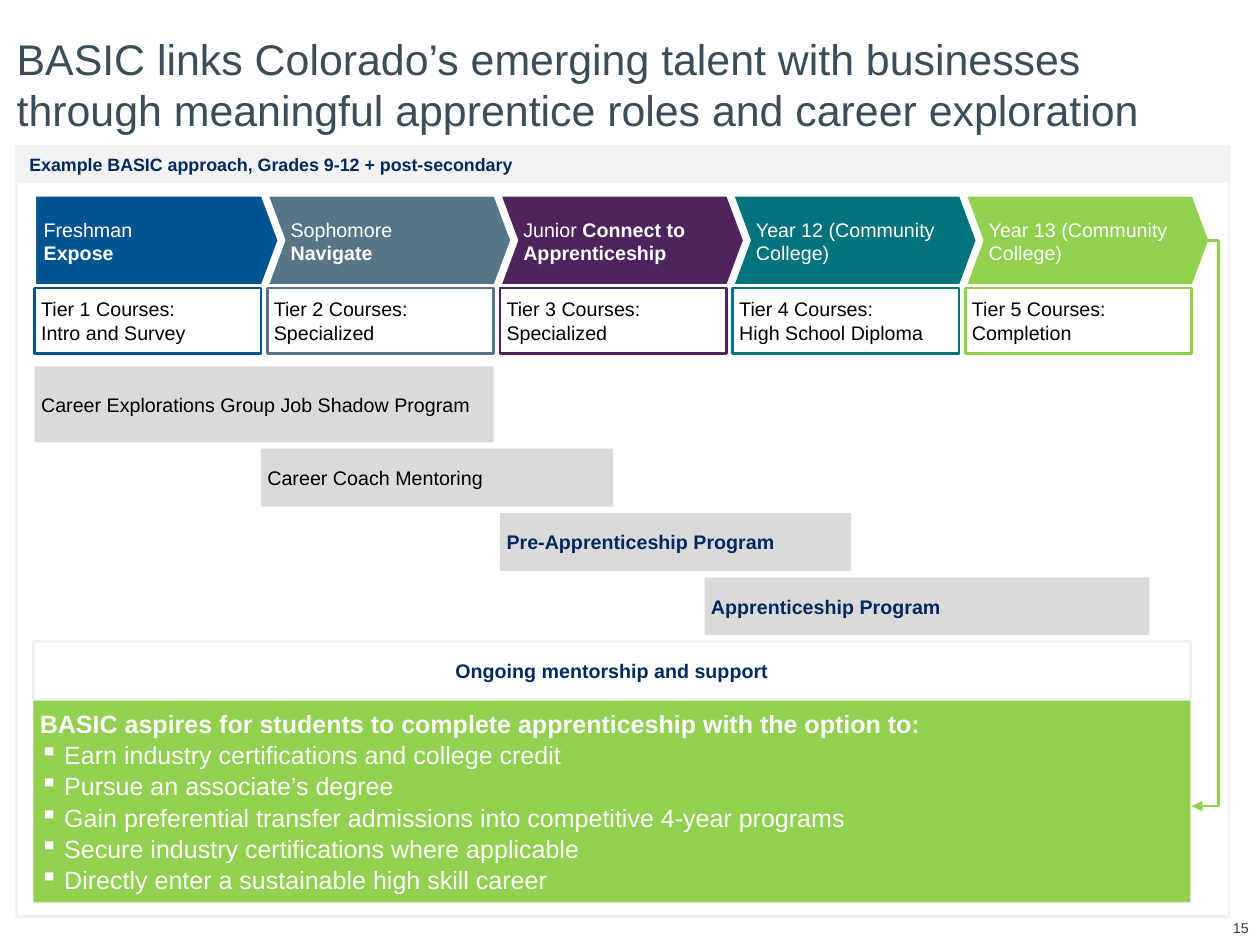
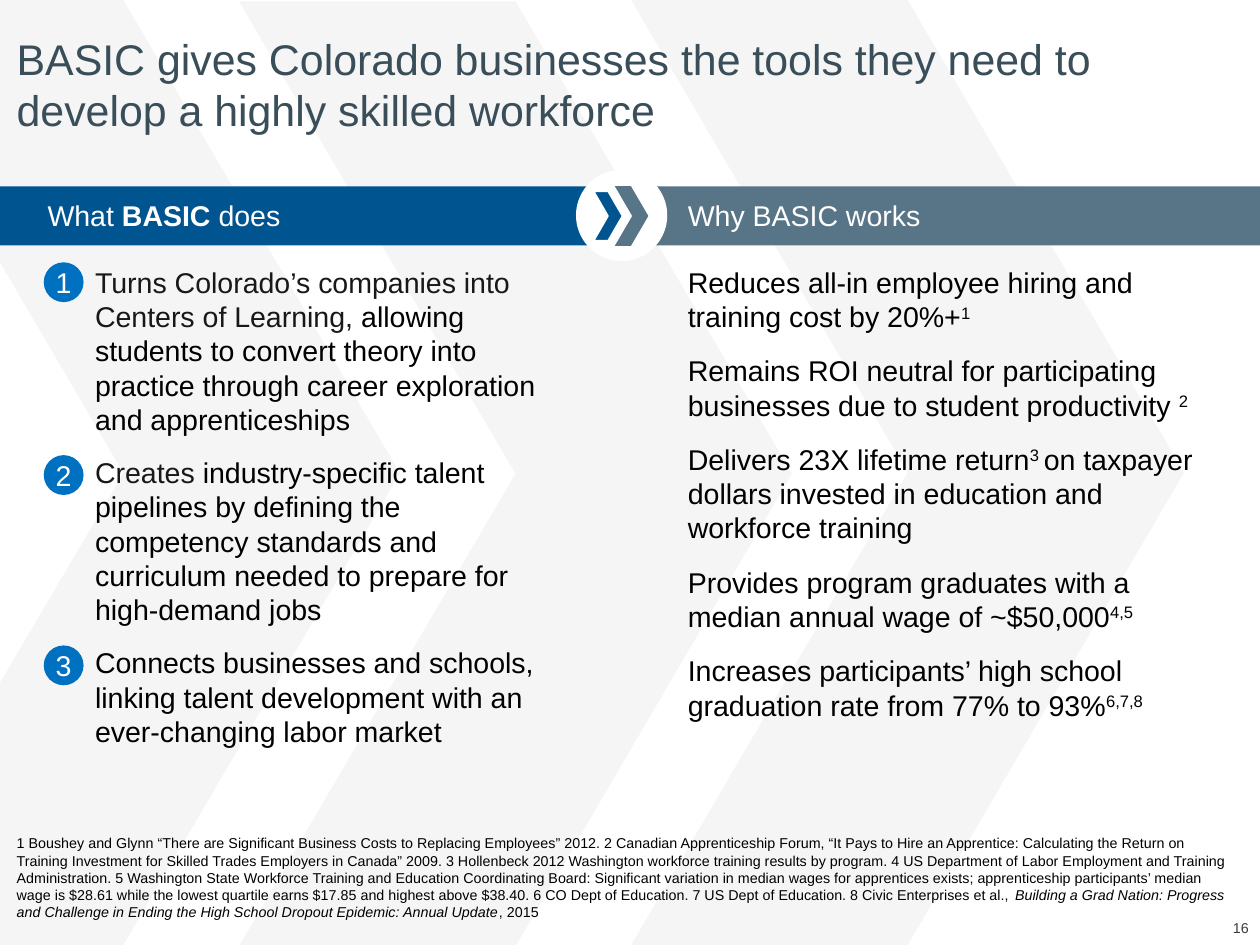
import pptx
import pptx.util
import pptx.dml.color
import pptx.enum.shapes
import pptx.enum.text
import pptx.oxml
import pptx.oxml.ns
import lxml.etree

PX = 9144  # 100 px to the inch
KIND = pptx.enum.shapes.MSO_SHAPE
ANCHOR = pptx.enum.text.MSO_ANCHOR
ALIGN = pptx.enum.text.PP_ALIGN
Pt = pptx.util.Pt
qn = pptx.oxml.ns.qn

# Shared colours
BLUE, SLATE, PLUM, TEAL, LIME = "005490", "577586", "4D245D", "00737D", "92D050"
NAVY, WHITE, BLACK, PALE, GREY = "002960", "FFFFFF", "000000", "F2F2F2", "DADADA"
BOLD = {"bold": True}
SUP = {"base": 30000}


def paint(fill, hue, alpha=None):
    if hue is None:
        fill.background()
        return
    fill.solid()
    fill.fore_color.rgb = pptx.dml.color.RGBColor.from_string(hue)
    if alpha:
        tone = fill._xPr.find(qn("a:solidFill"))[0]
        lxml.etree.SubElement(tone, qn("a:alpha")).set("val", str(alpha * 1000))


def put(page, kind, at, fill=None, line=None, wide=1.5, alpha=None, text=(),
        size=11, hue=BLACK, bold=False, pad=(0, 0), mid=ANCHOR.MIDDLE,
        align=ALIGN.LEFT, gap=0, dent=0, wrap=True):
    """Place a shape, a freeform (kind is a list of points) or a text box (None)."""
    if isinstance(kind, list):
        pen = page.shapes.build_freeform(*kind[0], scale=PX)
        pen.add_line_segments(kind[1:], close=True)
        item = pen.convert_to_shape()
    else:
        spot = [v * PX for v in at]
        item = page.shapes.add_shape(kind, *spot) if kind else page.shapes.add_textbox(*spot)
    item.shadow.inherit = False
    paint(item.fill, fill, alpha)
    paint(item.line.fill, line)
    if line:
        item.line.width = Pt(wide)

    frame = item.text_frame
    look = {"word_wrap": wrap, "vertical_anchor": mid,
            "margin_left": (pad[0] + dent) * PX, "margin_right": pad[0] * PX,
            "margin_top": pad[1] * PX, "margin_bottom": pad[1] * PX}
    for key, val in look.items():
        setattr(frame, key, val)
    for n, runs in enumerate([text] if isinstance(text, str) else text):
        para = frame.add_paragraph() if n else frame.paragraphs[0]
        para.alignment = align
        if n and gap:
            para.space_before = Pt(gap)
        for part in [runs] if isinstance(runs, str) else runs:
            words, extra = (part, {}) if isinstance(part, str) else part
            run = para.add_run()
            run.text = words
            style = {"name": "Arial", "size": Pt(size), "bold": bold, "hue": hue} | extra
            for key, val in style.items():
                if key == "hue":
                    paint(run.font.fill, val)
                elif key == "base":
                    run._r.get_or_add_rPr().set("baseline", str(val))
                else:
                    setattr(run.font, key, val)
    return item


deck = pptx.Presentation()
deck.slide_width, deck.slide_height = 980 * PX, 735 * PX
path, tools = [deck.slides.add_slide(deck.slide_layouts[6]) for _ in range(2)]

# Slide 2 backdrop, behind everything else
edge = [(0, 0), (96, 0), (311, 368), (96, 735), (0, 735), (0, 531), (96, 368), (0, 204)]
put(tools, edge, None, PALE, alpha=74)
for x, y in (491, 0), (186, 1):
    put(tools, KIND.CHEVRON, (x, y, 430, 735), PALE, alpha=74)

# Titles and page numbers
heads = [
    (path, "15", "BASIC links Colorado’s emerging talent with businesses through "
     "meaningful apprentice roles and career exploration"),
    (tools, "16", "BASIC gives Colorado businesses the tools they need to "
     "develop a highly skilled workforce"),
]
for page, num, title in heads:
    put(page, None, (13, 25, 943, 81), text=title, size=24, hue="3A4E59", mid=ANCHOR.TOP)
    put(page, None, (959, 715, 14, 13), text=num, size=8, hue="3C3C3C")

# Slide 1: panel and its heading
put(path, KIND.RECTANGLE, (13, 114, 943, 599), WHITE, PALE)
put(path, KIND.RECTANGLE, (13, 114, 943, 27), PALE, PALE, size=10, hue=NAVY, bold=True,
    text="Example BASIC approach, Grades 9-12 + post-secondary",
    pad=(10, 5), mid=ANCHOR.BOTTOM)
put(path, KIND.RECTANGLE, (26, 499, 900, 45), WHITE, PALE, hue=NAVY, bold=True,
    text="Ongoing mentorship and support", pad=(5, 5), align=ALIGN.CENTER)

# Year arrows with a course box under each
years = [
    (BLUE, ["Freshman", [("Expose", BOLD)]], ["Tier 1 Courses:", "Intro and Survey"]),
    (SLATE, ["Sophomore", [("Navigate", BOLD)]], "Tier 2 Courses: Specialized"),
    (PLUM, [["Junior ", ("Connect to Apprenticeship", BOLD)]], "Tier 3 Courses: Specialized"),
    (TEAL, "Year 12 (Community College)", ["Tier 4 Courses:", "High School Diploma"]),
    (LIME, "Year 13 (Community College)", ["Tier 5 Courses:", "Completion"]),
]
for n, (hue, label, course) in enumerate(years):
    x = 27 + 181 * n
    notch, inset = (13, 18) if n else (0, 7)
    arrow = [(x, 152), (x + 177, 152), (x + 190, 187),
             (x + 177, 222), (x, 222), (x + notch, 187)]
    put(path, arrow, None, hue, WHITE)
    put(path, KIND.RECTANGLE, (x + inset, 157, 177 - inset, 61), hue, text=label, hue=WHITE)
    put(path, KIND.RECTANGLE, (x, 224, 176, 51), WHITE, hue, text=course, pad=(5, 5))

# Program bars
bars = [
    ((27, 285, 357, 59), "Career Explorations Group Job Shadow Program", BLACK),
    ((203, 349, 274, 45), "Career Coach Mentoring", BLACK),
    ((389, 399, 273, 45), "Pre-Apprenticeship Program", NAVY),
    ((548, 449, 346, 45), "Apprenticeship Program", NAVY),
]
for at, label, hue in bars:
    put(path, KIND.RECTANGLE, at, GREY, text=label, hue=hue, bold=hue == NAVY, pad=(5, 5))

# Goals with square bullets
goals = put(path, KIND.RECTANGLE, (26, 545, 900, 157), LIME, size=14, hue=WHITE, pad=(5, 5),
            gap=0.7, text=[
    [("BASIC aspires for students to complete apprenticeship with the option to:", BOLD)],
    "Earn industry certifications and college credit",
    "Pursue an associate’s degree",
    "Gain preferential transfer admissions into competitive 4-year programs",
    "Secure industry certifications where applicable",
    "Directly enter a sustainable high skill career",
])
for para in goals.text_frame.paragraphs[1:]:
    props = para._p.get_or_add_pPr()
    props.set("marL", str(19 * PX))
    props.set("indent", str(-19 * PX))
    tint = lxml.etree.SubElement(props, qn("a:buClr"))
    lxml.etree.SubElement(tint, qn("a:srgbClr")).set("val", WHITE)
    lxml.etree.SubElement(props, qn("a:buChar")).set("char", "▪")

# Elbow arrow from the last year to the goals
link = path.shapes.add_connector(pptx.enum.shapes.MSO_CONNECTOR.ELBOW,
                                 940 * PX, 187 * PX, 927 * PX, 627 * PX)
paint(link.line.fill, LIME)
link.line.width = Pt(1.5)
lxml.etree.SubElement(link.line._get_or_add_ln(), qn("a:tailEnd")).set("type", "triangle")
props = link._element.spPr
lxml.etree.SubElement(props, qn("a:effectLst"))
guide = lxml.etree.SubElement(props.find(qn("a:prstGeom")).get_or_add_avLst(), qn("a:gd"))
guide.set("name", "adj1")
guide.set("fmla", "val -58800")

# Slide 2: header bands and the double chevron
put(tools, KIND.RECTANGLE, (0, 145, 491, 46), BLUE)
put(tools, KIND.RECTANGLE, (484, 145, 496, 46), SLATE)
put(tools, KIND.OVAL, (448, 132, 71, 71), WHITE)
put(tools, KIND.CHEVRON, (477, 144, 28, 48), SLATE, WHITE, 0.75)
put(tools, KIND.CHEVRON, (462, 149, 22, 38), BLUE, WHITE, 0.75)
for x, label in (37, [["What ", ("BASIC", BOLD), " does"]]), (535, "Why BASIC works"):
    put(tools, None, (x, 154, 190, 27), text=label, size=16, hue=WHITE, mid=ANCHOR.TOP)

# Numbered points
DARK = {"hue": "181818"}
points = [
    (206, 204, 135, [("Turns Colorado’s companies into Centers of Learning, ", DARK),
     "allowing students to convert theory into practice through career exploration "
     "and apprenticeships"]),
    (354, 354, 135, [("Creates ", DARK),
     "industry-specific talent pipelines by defining the competency standards and "
     "curriculum needed to prepare for high-demand jobs"]),
    (502, 502, 81, ["Connects businesses and schools, linking talent development with an "
     "ever-changing labor market"]),
]
for n, (y, top, tall, runs) in enumerate(points, 1):
    put(tools, None, (53, y, 376, tall), text=[runs], size=16, dent=21, mid=ANCHOR.TOP)
    put(tools, KIND.OVAL, (34, top, 31, 31), "0070C0", text=str(n), size=16, hue=WHITE,
        align=ALIGN.CENTER, wrap=False)

# Reasons
put(tools, None, (535, 206, 399, 372), size=16, mid=ANCHOR.TOP, gap=11.2, text=[
    ["Reduces all-in employee hiring and training cost by 20%+", ("1", SUP)],
    ["Remains ROI neutral for participating businesses due to student productivity ",
     ("2", SUP)],
    ["Delivers 23X lifetime return", ("3 ", SUP),
     "on taxpayer dollars invested in education and workforce training"],
    ["Provides program graduates with a median annual wage of ~$50,000", ("4,5", SUP)],
    ["Increases participants’ high school graduation rate from 77% to 93%", ("6,7,8", SUP)],
])

# Sources
put(tools, None, (13, 649, 950, 67), size=8, text=[[
    "1 Boushey and Glynn “There are Significant Business Costs to Replacing Employees” 2012. "
    "2 Canadian Apprenticeship Forum, “It Pays to Hire an Apprentice: Calculating the Return "
    "on Training Investment for Skilled Trades Employers in Canada” 2009. "
    "3 Hollenbeck 2012 Washington workforce training results by program. "
    "4 US Department of Labor Employment and Training Administration. "
    "5 Washington State Workforce Training and Education Coordinating Board: Significant "
    "variation in median wages for apprentices exists; apprenticeship participants’ median "
    "wage is $28.61 while the lowest quartile earns $17.85 and highest above $38.40. "
    "6 CO Dept of Education. 7 US Dept of Education. 8 Civic Enterprises et al., ",
    ("Building a Grad Nation: Progress and Challenge in Ending the High School Dropout "
     "Epidemic: Annual Update", {"italic": True}),
    ", 2015",
]])

deck.save("out.pptx")
